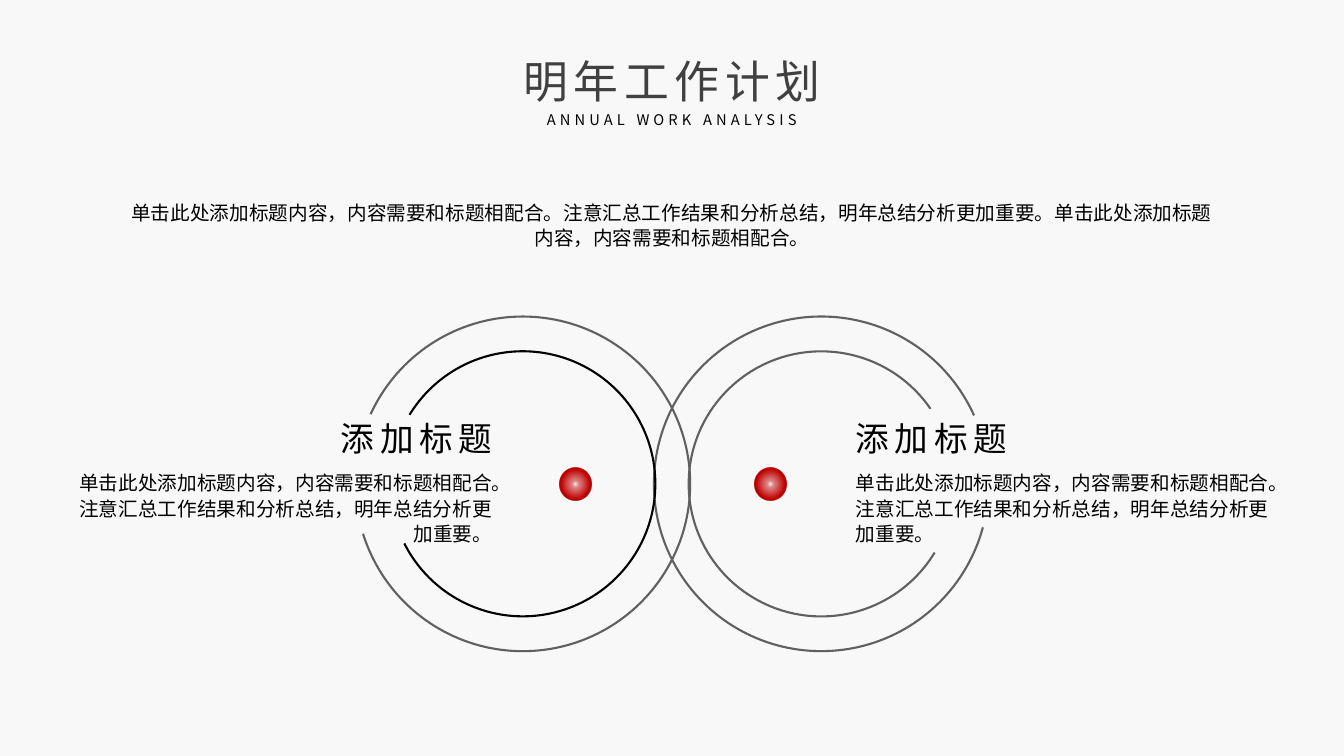
"""Build the slide for next year's work plan with two pairs of linked arcs."""
from lxml import etree
from pptx import Presentation
from pptx.dml.color import RGBColor
from pptx.enum.lang import MSO_LANGUAGE_ID as Lang
from pptx.enum.shapes import MSO_SHAPE as Shape
from pptx.enum.text import MSO_AUTO_SIZE as AutoSize, PP_ALIGN as Align
from pptx.oxml import parse_xml
from pptx.oxml.ns import qn
from pptx.util import Inches, Pt

COLORS = {"paper": "F8F8F8", "title": "404040", "text": "000000",
          "ring": "606060", "glow": "F6F8FC", "red": "C00000"}
FONT = "Noto Sans CJK SC"
WIDTH, HEIGHT = 13.33, 7.5
MIDDLE = WIDTH / 2
RING_Y = 4.8
SENTENCE = "单击此处添加标题内容，内容需要和标题相配合。"
BODY = SENTENCE + "注意汇总工作结果和分析总结，明年总结分析更加重要。"

deck = Presentation()
deck.slide_width, deck.slide_height = Inches(WIDTH), Inches(HEIGHT)
slide = deck.slides.add_slide(deck.slide_layouts[6])
slide.background.fill.solid()
slide.background.fill.fore_color.rgb = RGBColor.from_string(COLORS["paper"])


def add_text(words, box, size, align, color="text", spacing=0, leading=None, wrap=True):
    area = slide.shapes.add_textbox(*map(Inches, box))
    frame = area.text_frame
    frame.word_wrap = wrap
    frame.auto_size = AutoSize.SHAPE_TO_FIT_TEXT
    paragraph = frame.paragraphs[0]
    paragraph.alignment = align
    if leading:
        paragraph.line_spacing = Pt(leading)
    run = paragraph.add_run()
    run.text = words
    run.font.size = Pt(size)
    run.font.color.rgb = RGBColor.from_string(COLORS[color])
    run.font.name = FONT
    run.font.language_id = Lang.SIMPLIFIED_CHINESE
    properties = run._r.get_or_add_rPr()
    etree.SubElement(properties, qn("a:ea")).set("typeface", FONT)
    if spacing:
        properties.set("spc", str(spacing * 100))


def add_round(kind, center_x, diameter):
    left, top = center_x - diameter / 2, RING_Y - diameter / 2
    figure = slide.shapes.add_shape(kind, *map(Inches, (left, top, diameter, diameter)))
    figure.shadow.inherit = False
    return figure


add_text("明年工作计划", (MIDDLE - 1.77, 0.48, 3.54, 0.64), 32, Align.CENTER, "title", 4)
add_text("ANNUAL WORK ANALYSIS", (MIDDLE - 1.46, 1.05, 2.92, 0.28), 10.5,
         Align.CENTER, spacing=3, wrap=False)

OUTER, INNER = 3.32, 2.63
rings = [
    (1, 180, OUTER, 117.04, 93.53, "ring"),
    (1, 180, INNER, 126.73, 87.3, "ring"),
    (-1, 0, OUTER, 122.75, 97.58, "ring"),
    (-1, 0, INNER, 126.82, 91.95, "text"),
]
for side, turn, diameter, start, end, color in rings:
    ring = add_round(Shape.ARC, MIDDLE + side * 1.48, diameter)
    ring.rotation = turn
    ring.adjustments[0], ring.adjustments[1] = start, end
    ring.fill.background()
    ring.line.color.rgb = RGBColor.from_string(COLORS[color])
    ring.line.width = Pt(1.5)

HEADING_W, BODY_W = 1.76, 4.35
for heading_x, body_x, align in [(4.98 - HEADING_W, 4.98 - BODY_W, Align.RIGHT),
                                 (8.39, 8.39, Align.LEFT)]:
    add_text("添加标题", (heading_x, 4.1, HEADING_W, 0.5), 24, align, spacing=4)
    add_text(BODY, (body_x, 4.61, BODY_W, 0.86), 14, align, leading=18)

GLOW = f"""<a:gradFill xmlns:a="http://schemas.openxmlformats.org/drawingml/2006/main" rotWithShape="1">
<a:gsLst>
<a:gs pos="0"><a:srgbClr val="{COLORS['glow']}"/></a:gs>
<a:gs pos="23000"><a:srgbClr val="{COLORS['red']}"><a:alpha val="55000"/></a:srgbClr></a:gs>
<a:gs pos="63000"><a:srgbClr val="{COLORS['red']}"/></a:gs>
<a:gs pos="100000"><a:srgbClr val="{COLORS['red']}"/></a:gs>
</a:gsLst>
<a:path path="circle"><a:fillToRect l="50000" t="50000" r="50000" b="50000"/></a:path>
</a:gradFill>"""
for side in (-1, 1):
    dot = add_round(Shape.OVAL, MIDDLE + 0.01 + side * 0.97, 0.32)
    dot.line.fill.background()
    dot.fill.gradient()
    gradient = dot._element.spPr.find(qn("a:gradFill"))
    gradient.getparent().replace(gradient, parse_xml(GLOW))

add_text(BODY + SENTENCE, (MIDDLE - 5.51, 1.93, 11.02, 0.61), 14, Align.CENTER, leading=18)

deck.save("out.pptx")
